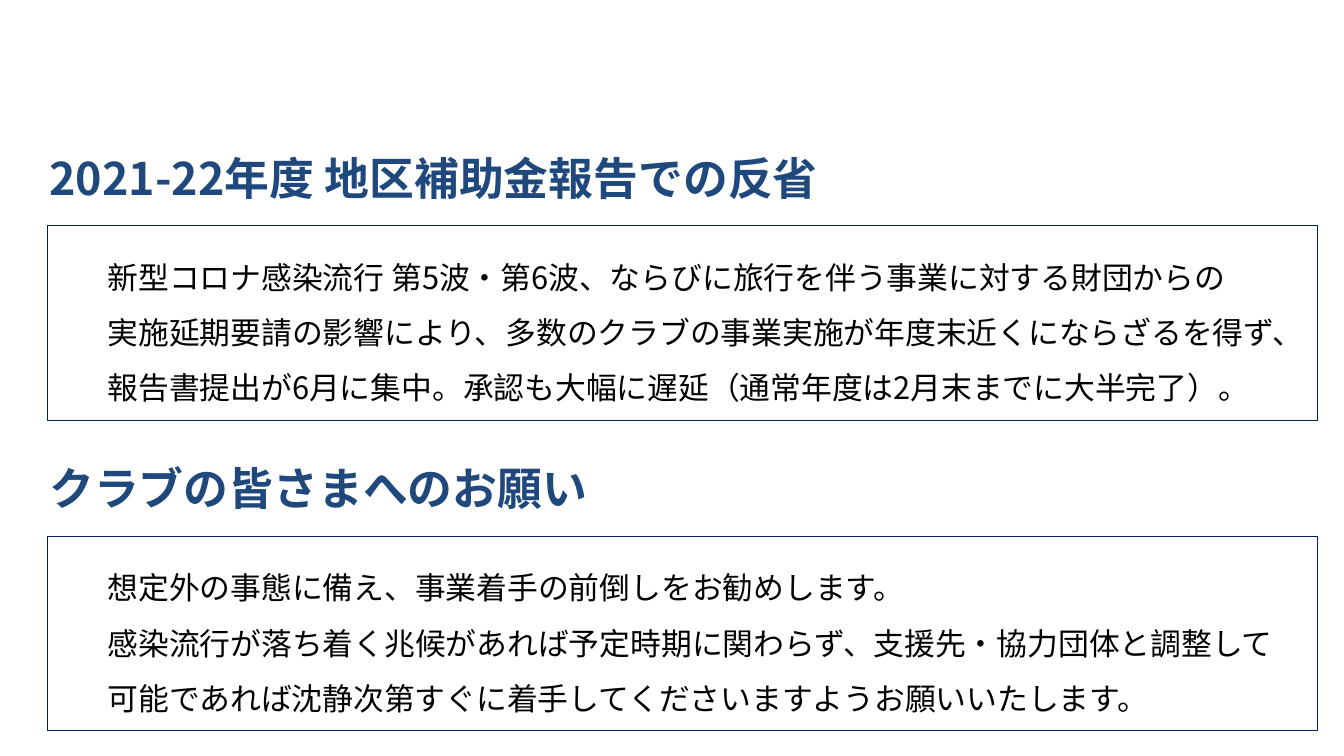
import pptx
import pptx.util
import pptx.dml.color
import pptx.enum.shapes
import pptx.enum.text
import lxml.etree

Inches = pptx.util.Inches
FONT = "Noto Sans CJK JP"
HEADING = {"size": pptx.util.Pt(32), "bold": True, "name": FONT}
BODY = {"size": pptx.util.Pt(22), "bold": False, "name": FONT}
SECTIONS = [
    (1.44, "2021-22年度 地区補助金報告での反省", [
        "新型コロナ感染流行 第5波・第6波、ならびに旅行を伴う事業に対する財団からの",
        "実施延期要請の影響により、多数のクラブの事業実施が年度末近くにならざるを得ず、",
        "報告書提出が6月に集中。承認も大幅に遅延（通常年度は2月末までに大半完了）。",
    ]),
    (4.52, "クラブの皆さまへのお願い", [
        "想定外の事態に備え、事業着手の前倒しをお勧めします。",
        "感染流行が落ち着く兆候があれば予定時期に関わらず、支援先・協力団体と調整して",
        "可能であれば沈静次第すぐに着手してくださいますようお願いいたします。",
    ]),
]


def color(value):
    return pptx.dml.color.RGBColor.from_string(value)


def write(para, text, formats, ink):
    para.alignment = pptx.enum.text.PP_ALIGN.LEFT
    span = para.add_run()
    span.text = text
    for key, value in formats.items():
        setattr(span.font, key, value)
    span.font.color.rgb = color(ink)
    east = lxml.etree.SubElement(span.font._element, pptx.oxml.ns.qn("a:ea"))
    east.set("typeface", FONT)


deck = pptx.Presentation()
deck.slide_width = Inches(13.33)
deck.slide_height = Inches(7.5)
page = deck.slides.add_slide(deck.slide_layouts[5])

for index, (top, heading, lines) in enumerate(SECTIONS):
    place = [Inches(value) for value in (0.39, top, 10.36, 0.64)]
    if index == 0:
        label = page.shapes.title
        label.left, label.top, label.width, label.height = place
    else:
        label = page.shapes.add_textbox(*place)
    label.text_frame.word_wrap = True
    label.text_frame.auto_size = pptx.enum.text.MSO_AUTO_SIZE.NONE
    label.text_frame.vertical_anchor = pptx.enum.text.MSO_ANCHOR.TOP
    write(label.text_frame.paragraphs[0], heading, HEADING, "1F497D")

    box = page.shapes.add_shape(
        pptx.enum.shapes.MSO_SHAPE.RECTANGLE,
        Inches(0.47), Inches(top + 0.8), Inches(12.6), Inches(1.93))
    box.shadow.inherit = False
    box.fill.background()
    box.line.color.rgb = color("002060")
    box.line.width = pptx.util.Pt(0.75)
    frame = box.text_frame
    frame.word_wrap = True
    frame.vertical_anchor = pptx.enum.text.MSO_ANCHOR.MIDDLE
    for number, line in enumerate(lines):
        para = frame.add_paragraph() if number else frame.paragraphs[0]
        para.level = 1
        para.line_spacing = 1.5
        indent = para._p.get_or_add_pPr()
        indent.set("marL", str(Inches(0.5)))
        indent.set("indent", "0")
        write(para, line, BODY, "000000")

deck.save("out.pptx")
